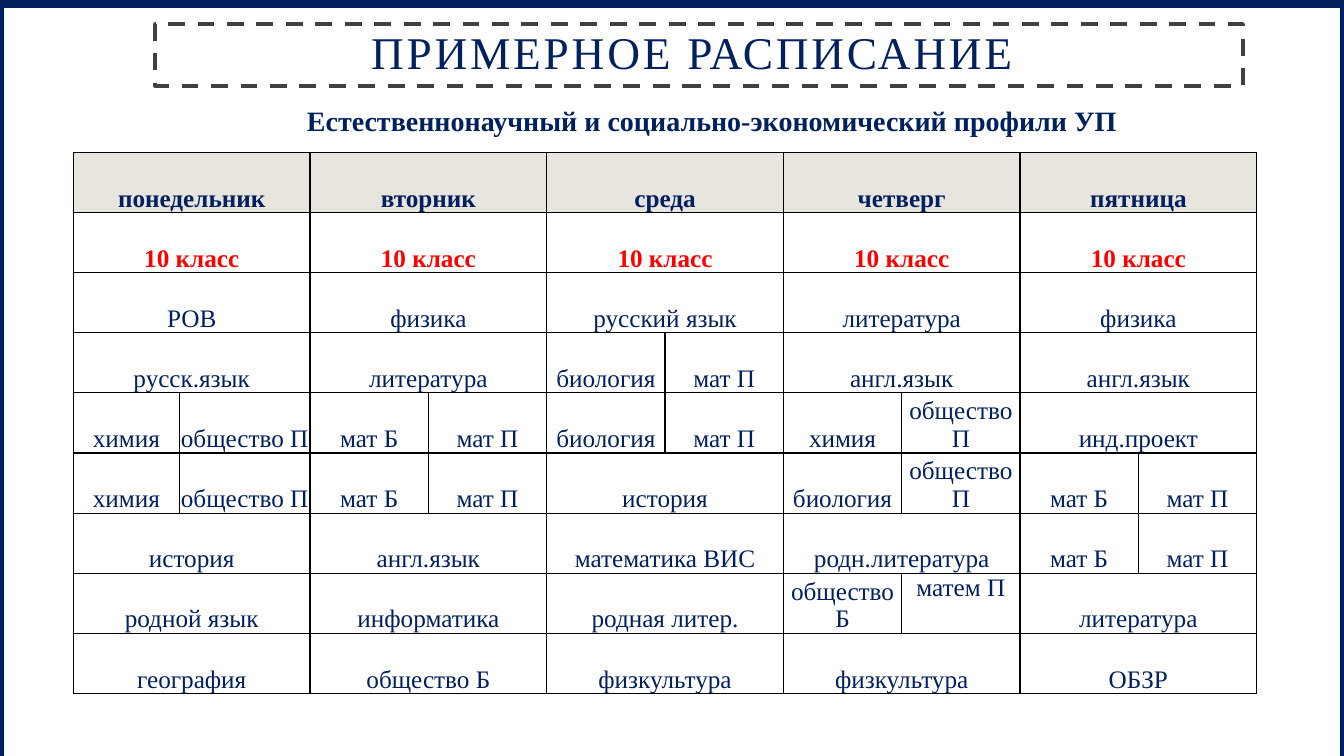
from dataclasses import dataclass
from typing import Any, Optional

import lxml.etree
import pptx
import pptx.dml.color
import pptx.enum.dml
import pptx.enum.shapes
import pptx.enum.text
import pptx.oxml.ns
import pptx.util

Cm = pptx.util.Cm
Pt = pptx.util.Pt
Anchor = pptx.enum.text.MSO_ANCHOR

NAVY = "002060"
RED = "FF0000"
WHITE = "FFFFFF"
BEIGE = "E8E5DE"
FONT = "Times New Roman"

TABLE_WIDTH = 29.82
TABLE_HEIGHT = 13.64
MONDAY_LEFT_WIDTH = 2.67


@dataclass(frozen=True)
class Row:
    days: tuple[str, ...]
    color: str = NAVY
    fill: str = WHITE
    bold: bool = False


@dataclass(frozen=True)
class Lesson:
    text: str
    row: int
    column: int
    span: int
    anchor: Any = Anchor.BOTTOM


ROWS = [
    Row(("понедельник", "вторник", "среда", "четверг", "пятница"), fill=BEIGE, bold=True),
    Row(("10 класс",) * 5, color=RED, bold=True),
    Row(("РОВ", "физика", "русский язык", "литература", "физика")),
    Row(("русск.язык", "литература", "биология|мат П", "англ.язык", "англ.язык")),
    Row(("химия|общество П", "мат Б|мат П", "биология|мат П", "химия|общество П", "инд.проект")),
    Row(("химия|общество П", "мат Б|мат П", "история", "биология|общество П", "мат Б|мат П")),
    Row(("история", "англ.язык", "математика ВИС", "родн.литература", "мат Б|мат П")),
    Row(("родной язык", "информатика", "родная литер.", "общество Б|матем П", "литература")),
    Row(("география", "общество Б", "физкультура", "физкультура", "ОБЗР")),
]


def rgb(value: str) -> pptx.dml.color.RGBColor:
    return pptx.dml.color.RGBColor.from_string(value)


def write(frame: Any, text: str, *, size: float, color: str = NAVY, bold: bool = False,
          line_spacing: Optional[float] = None, letter_spacing: float = 0) -> None:
    para = frame.paragraphs[0]
    para.alignment = pptx.enum.text.PP_ALIGN.CENTER
    if line_spacing:
        para.line_spacing = line_spacing
    span = para.add_run()
    span.text = text
    span.font.name = FONT
    span.font.size = Pt(size)
    span.font.bold = bold
    span.font.color.rgb = rgb(color)
    if letter_spacing:
        span.font._element.set("spc", str(round(letter_spacing * 100)))


def paint(shape: Any, *, fill: str, line: str, width: float) -> None:
    shape.fill.solid()
    shape.fill.fore_color.rgb = rgb(fill)
    shape.line.color.rgb = rgb(line)
    shape.line.width = Pt(width)


def set_margins(target: Any, left: float, top: float, right: float, bottom: float) -> None:
    target.margin_left, target.margin_top = Cm(left), Cm(top)
    target.margin_right, target.margin_bottom = Cm(right), Cm(bottom)


def add_borders(cell: Any) -> None:
    properties = cell._tc.get_or_add_tcPr()
    for side in ("a:lnL", "a:lnR", "a:lnT", "a:lnB"):
        border = lxml.etree.SubElement(properties, pptx.oxml.ns.qn(side), w=str(Pt(1)))
        solid = lxml.etree.SubElement(border, pptx.oxml.ns.qn("a:solidFill"))
        lxml.etree.SubElement(solid, pptx.oxml.ns.qn("a:srgbClr"), val="000000")


def add_frame(page: Any, width: int, height: int) -> None:
    frame = page.shapes.add_shape(
        pptx.enum.shapes.MSO_SHAPE.RECTANGLE, 0, Cm(0.1), width, height)
    frame.shadow.inherit = False
    paint(frame, fill=WHITE, line=NAVY, width=6)
    page.shapes._spTree.insert(2, frame._element)


def add_title(page: Any) -> None:
    title = page.shapes.title
    title.left, title.top, title.width, title.height = Cm(3.91), Cm(0.61), Cm(27.41), Cm(1.55)
    paint(title, fill=WHITE, line="404040", width=3)
    title.line.dash_style = pptx.enum.dml.MSO_LINE.DASH
    frame = title.text_frame
    frame.auto_size = pptx.enum.text.MSO_AUTO_SIZE.NONE
    frame.word_wrap = True
    frame.vertical_anchor = Anchor.MIDDLE
    set_margins(frame, 0.5, 0.5, 0.5, 0.5)
    write(frame, "ПРИМЕРНОЕ РАСПИСАНИЕ ", size=32.4, line_spacing=0.9, letter_spacing=2)


def add_subtitle(page: Any) -> None:
    box = page.shapes.add_textbox(Cm(7.44), Cm(2.49), Cm(21.01), Cm(1.11))
    box.text_frame.word_wrap = True
    write(box.text_frame, "Естественнонаучный и социально-экономический профили УП",
          size=20, bold=True)


def lessons_of(row: int) -> list[Lesson]:
    lessons = []
    for day, entry in enumerate(ROWS[row].days):
        parts = entry.split("|")
        for half, text in enumerate(parts):
            anchor = Anchor.TOP if text == "матем П" else Anchor.BOTTOM
            lessons.append(Lesson(text, row, 2 * day + half, 3 - len(parts), anchor))
    return lessons


def add_lesson(table: Any, lesson: Lesson) -> None:
    style = ROWS[lesson.row]
    cell = table.cell(lesson.row, lesson.column)
    if lesson.span > 1:
        cell.merge(table.cell(lesson.row, lesson.column + lesson.span - 1))
    cell.vertical_anchor = lesson.anchor
    write(cell.text_frame, lesson.text, size=18, color=style.color, bold=style.bold)


def add_schedule(page: Any) -> None:
    day_count = len(ROWS[0].days)
    table = page.shapes.add_table(
        len(ROWS), 2 * day_count, Cm(1.85), Cm(3.84), Cm(TABLE_WIDTH), Cm(TABLE_HEIGHT)).table
    table.first_row = False
    table.horz_banding = False
    day_width = TABLE_WIDTH / day_count
    for column in table.columns:
        column.width = Cm(day_width / 2)
    table.columns[0].width = Cm(MONDAY_LEFT_WIDTH)
    table.columns[1].width = Cm(day_width - MONDAY_LEFT_WIDTH)
    for index, row in enumerate(table.rows):
        row.height = Cm(TABLE_HEIGHT / len(ROWS))
        for cell in row.cells:
            add_borders(cell)
            cell.fill.solid()
            cell.fill.fore_color.rgb = rgb(ROWS[index].fill)
            set_margins(cell, 0.03, 0.03, 0.03, 0)
        for lesson in lessons_of(index):
            add_lesson(table, lesson)


def main() -> None:
    deck = pptx.Presentation()
    deck.slide_width, deck.slide_height = Cm(33.87), Cm(19.05)
    page = deck.slides.add_slide(deck.slide_layouts.get_by_name("Title Only"))
    page.background.fill.solid()
    page.background.fill.fore_color.rgb = rgb("F2F2F2")
    add_frame(page, deck.slide_width, deck.slide_height)
    add_title(page)
    add_schedule(page)
    add_subtitle(page)
    deck.save("out.pptx")


if __name__ == "__main__":
    main()
